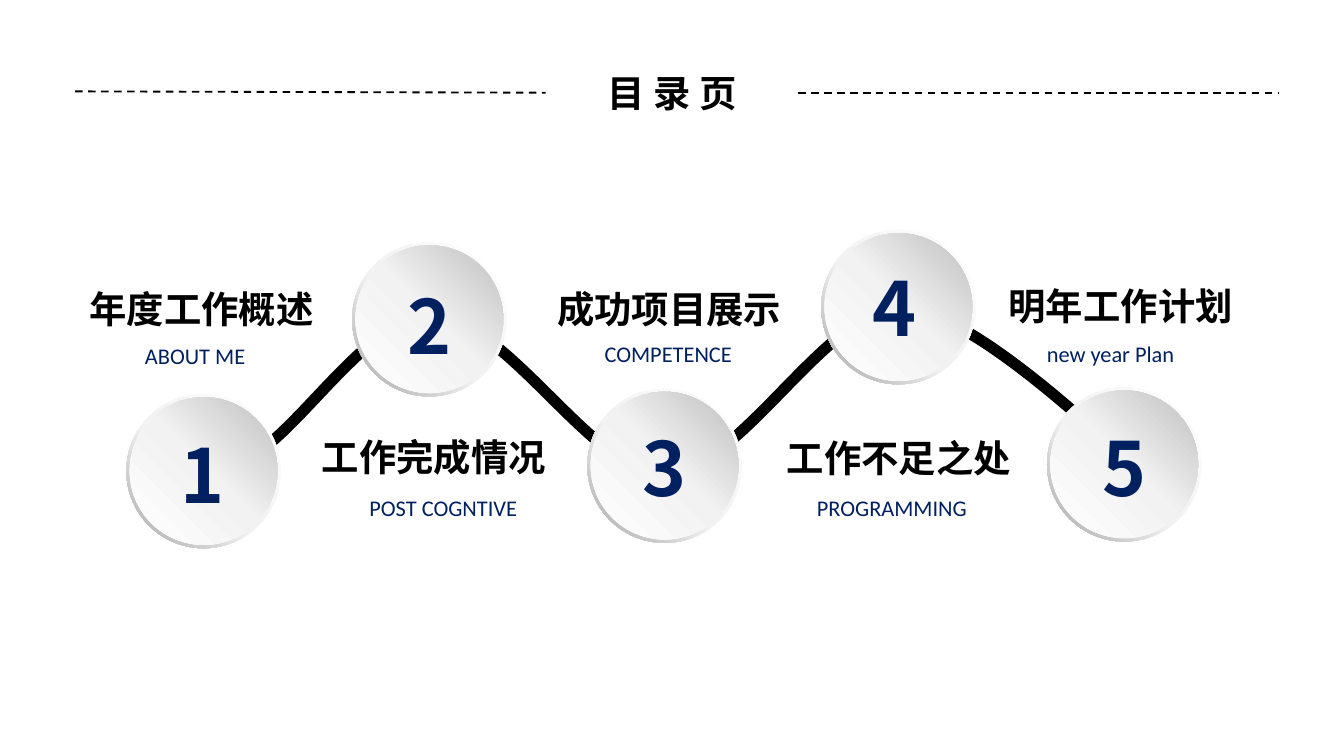
"""Build a contents slide with five numbered stops along a winding road."""
import lxml.etree
import pptx
import pptx.dml.color
import pptx.enum.dml
import pptx.enum.shapes
import pptx.enum.text
import pptx.oxml.ns
import pptx.util
from pptx.util import Inches

BLACK = pptx.dml.color.RGBColor(0x00, 0x00, 0x00)
NAVY = pptx.dml.color.RGBColor(0x00, 0x20, 0x60)
WHITE = pptx.dml.color.RGBColor(0xFF, 0xFF, 0xFF)
PALE = pptx.dml.color.RGBColor(0xF2, 0xF2, 0xF2)
SILVER = pptx.dml.color.RGBColor(0xBF, 0xBF, 0xBF)
GRAY = pptx.dml.color.RGBColor(0xA6, 0xA6, 0xA6)
CHINESE_FONT = "Noto Sans CJK SC"
CENTER = pptx.enum.text.PP_ALIGN.CENTER
LEFT = pptx.enum.text.PP_ALIGN.LEFT
qn = pptx.oxml.ns.qn


def add_text(shapes, box, text, size, color, font_name=CHINESE_FONT, align=CENTER, wrap=True):
    textbox = shapes.add_textbox(*[Inches(value) for value in box])
    frame = textbox.text_frame
    frame.word_wrap = wrap
    frame.auto_size = pptx.enum.text.MSO_AUTO_SIZE.SHAPE_TO_FIT_TEXT
    paragraph = frame.paragraphs[0]
    paragraph.text = text
    paragraph.alignment = align
    paragraph.font.size = pptx.util.Pt(size)
    paragraph.font.bold = font_name == CHINESE_FONT
    paragraph.font.color.rgb = color
    paragraph.font.name = font_name
    properties = paragraph._p.pPr.find(qn("a:defRPr"))
    lxml.etree.SubElement(properties, qn("a:ea"), typeface=font_name)
    return textbox


def add_disc(shapes, kind, left, top, size, stops, angle):
    shape = shapes.add_shape(kind, Inches(left), Inches(top), Inches(size), Inches(size))
    shape.shadow.inherit = False
    shape.line.fill.background()
    shape.fill.gradient()
    shape.fill.gradient_angle = angle
    stop_list = shape._element.spPr.find(qn("a:gradFill")).find(qn("a:gsLst"))
    for stop in list(stop_list):
        stop_list.remove(stop)
    for percent, color in stops:
        stop = lxml.etree.SubElement(stop_list, qn("a:gs"), pos=str(percent * 1000))
        lxml.etree.SubElement(stop, qn("a:srgbClr"), val=str(color))
    return shape


presentation = pptx.Presentation()
presentation.slide_width = Inches(10)
presentation.slide_height = Inches(10 * 9 / 16)
slide = presentation.slides.add_slide(presentation.slide_layouts[6])

for start_x, start_y, end_x, end_y in [(0.56, 0.68, 4.06, 0.69), (5.94, 0.69, 9.52, 0.69)]:
    rule = slide.shapes.add_connector(
        pptx.enum.shapes.MSO_CONNECTOR.STRAIGHT,
        Inches(start_x), Inches(start_y), Inches(end_x), Inches(end_y))
    rule.line.color.rgb = BLACK
    rule.line.width = pptx.util.Pt(1)
    rule.line.dash_style = pptx.enum.dml.MSO_LINE.DASH
    lxml.etree.SubElement(rule._element.spPr, qn("a:effectLst"))

road_start = (1.56, 3.52)
road_curves = [
    ((2.08, 3.53), (2.65, 2.35), (3.21, 2.35)),
    ((3.77, 2.36), (4.4, 3.52), (4.94, 3.53)),
    ((5.51, 3.51), (6.14, 2.3), (6.7, 2.29)),
    ((7.24, 2.28), (8.41, 3.46), (8.41, 3.44)),
]
steps = 24
road_points = []
curve_start = road_start
for curve in road_curves:
    controls = (curve_start, *curve)
    for step in range(1, steps + 1):
        t = step / steps
        weights = ((1 - t) ** 3, 3 * t * (1 - t) ** 2, 3 * t ** 2 * (1 - t), t ** 3)
        road_points.append(tuple(
            Inches(sum(weight * point[axis] for weight, point in zip(weights, controls)))
            for axis in (0, 1)))
    curve_start = curve[-1]
builder = slide.shapes.build_freeform(Inches(road_start[0]), Inches(road_start[1]))
builder.add_line_segments(road_points, close=False)
road = builder.convert_to_shape()
road.shadow.inherit = False
road.fill.background()
road.line.color.rgb = BLACK
road.line.width = pptx.util.Pt(6)

ring_size, face_size = 1.15, 1.1
inset = (ring_size - face_size) / 2
stations = [
    ("1", 0.94, 2.93, 1.23, 3.14),
    ("3", 4.37, 2.89, 4.67, 3.09),
    ("2", 2.62, 1.8, 2.92, 2.03),
    ("4", 6.11, 1.71, 6.38, 1.9),
    ("5", 7.79, 2.88, 8.09, 3.09),
]
for number, left, top, text_left, text_top in stations:
    group = slide.shapes.add_group_shape()
    ring = add_disc(group.shapes, pptx.enum.shapes.MSO_SHAPE.DONUT, left, top, ring_size,
                    [(0, WHITE), (55, PALE), (100, GRAY)], 225)
    ring.adjustments[0] = 0.05
    add_disc(group.shapes, pptx.enum.shapes.MSO_SHAPE.OVAL, left + inset, top + inset,
             face_size, [(0, WHITE), (51, PALE), (100, SILVER)], 45)
    add_text(group.shapes, (text_left, text_top, 0.55, 0.77), number, 40, NAVY, wrap=False)

topics = [
    ("年度工作概述", 0.52, 2.08, "ABOUT ME", 0.98, 2.5, 1.01),
    ("工作完成情况", 2.25, 3.18, "POST COGNTIVE", 2.65, 3.63, 1.42),
    ("成功项目展示", 4, 2.08, "COMPETENCE", 4.4, 2.48, 1.25),
    ("工作不足之处", 5.71, 3.19, "PROGRAMMING", 5.98, 3.63, 1.41),
    ("明年工作计划", 7.36, 2.06, "new year Plan", 7.69, 2.48, 1.25),
]
for topic, left, top, subtitle, subtitle_left, subtitle_top, subtitle_width in topics:
    add_text(slide.shapes, (left, top, 1.96, 0.44), topic, 20, BLACK)
    add_text(slide.shapes, (subtitle_left, subtitle_top, subtitle_width, 0.3),
             subtitle, 12, NAVY, "Calibri", LEFT, wrap=False)

title_frame = add_text(slide.shapes, (3.9, 0.52, 2.2, 0.34), "目 录 页", 20, BLACK).text_frame
title_frame.margin_left = title_frame.margin_right = 0
title_frame.margin_top = title_frame.margin_bottom = 0

presentation.save("out.pptx")
